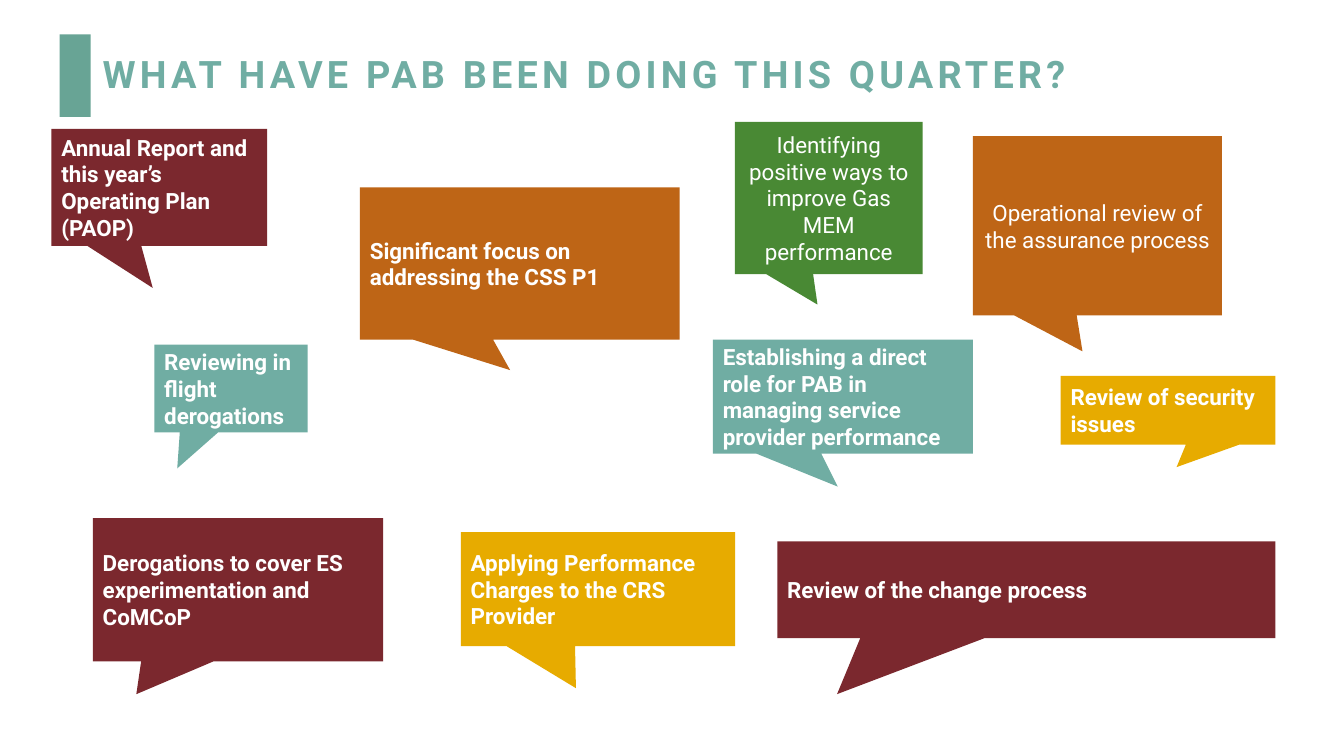
import pptx
import pptx.dml.color
import pptx.enum.shapes
import pptx.enum.text
import pptx.util
from pptx.util import Inches

ALIGN = pptx.enum.text.PP_ALIGN
SHAPES = pptx.enum.shapes.MSO_SHAPE

FONT = "Roboto"
MAROON, AMBER, ORANGE = "7B282E", "E7AB00", "BE6516"
TEAL, GREEN, WHITE = "70ADA3", "498934", "FFFFFF"

TITLE = "WHAT HAVE PAB BEEN DOING THIS QUARTER?"
TITLE_BOX = (0.92, 0.4, 10.15, 0.72)
ACCENT_BAR = (0.59, 0.34, 0.31, 0.82)
ACCENT_COLOUR = "68A495"

# wording, (left, top, width, height), pointer tip offset as share of size, fill
BOLD_ACTIVITIES = [
    ("Annual Report and this year’s Operating Plan (PAOP)",
     (0.51, 1.28, 2.14, 1.16), (-0.03, 0.86), MAROON),
    ("Applying Performance Charges to the CRS Provider",
     (4.57, 5.28, 2.72, 1.13), (-0.08, 0.87), AMBER),
    ("Significant focus on addressing the CSS P1",
     (3.57, 1.86, 3.17, 1.51), (-0.03, 0.7), ORANGE),
    ("Establishing a direct role for PAB in managing service provider performance",
     (7.07, 3.37, 2.58, 1.13), (-0.02, 0.79), TEAL),
    ("Review of the change process",
     (7.71, 5.37, 4.94, 0.96), (-0.38, 1.08), MAROON),
    ("Review of security issues",
     (10.52, 3.73, 2.13, 0.68), (0.04, 0.83), AMBER),
    ("Derogations to cover ES experimentation and CoMCoP",
     (0.92, 5.14, 2.88, 1.42), (-0.35, 0.73), MAROON),
    ("Reviewing in flight derogations",
     (1.53, 3.42, 1.52, 0.87), (-0.35, 0.91), TEAL),
]
CENTRED_ACTIVITIES = [
    ("Operational review of the assurance process",
     (9.65, 1.35, 2.47, 1.78), (-0.06, 0.7), ORANGE),
    ("Identifying positive ways to improve Gas MEM performance",
     (7.29, 1.21, 1.86, 1.51), (-0.06, 0.7), GREEN),
]


def colour(hex_code):
    return pptx.dml.color.RGBColor.from_string(hex_code)


def add_block(slide, preset, box, fill):
    block = slide.shapes.add_shape(preset, *map(Inches, box))
    block.shadow.inherit = False
    block.fill.solid()
    block.fill.fore_color.rgb = colour(fill)
    block.line.fill.background()
    return block


def write(shape, wording, size, text_colour, bold, align=ALIGN.LEFT):
    frame = shape.text_frame
    frame.word_wrap = True
    frame.vertical_anchor = pptx.enum.text.MSO_ANCHOR.MIDDLE
    paragraph = frame.paragraphs[0]
    paragraph.text = wording
    paragraph.alignment = align
    paragraph.font.name = FONT
    paragraph.font.size = pptx.util.Pt(size)
    paragraph.font.bold = bold
    paragraph.font.color.rgb = colour(text_colour)
    return paragraph


def add_callout(slide, activity, bold, align):
    wording, box, tip, fill = activity
    callout = add_block(slide, SHAPES.RECTANGULAR_CALLOUT, box, fill)
    callout.adjustments[0], callout.adjustments[1] = tip
    frame = callout.text_frame
    frame.margin_left = frame.margin_right = Inches(0.1)
    frame.margin_top = frame.margin_bottom = Inches(0.1)
    write(callout, wording, 16, WHITE, bold, align)


def main():
    deck = pptx.Presentation()
    deck.slide_width, deck.slide_height = Inches(13.33), Inches(7.5)
    slide = deck.slides.add_slide(deck.slide_layouts[6])

    # Heading with accent bar
    add_block(slide, SHAPES.RECTANGLE, ACCENT_BAR, ACCENT_COLOUR)
    heading = slide.shapes.add_textbox(*map(Inches, TITLE_BOX))
    title = write(heading, TITLE, 27, TEAL, True)
    title.line_spacing = 0.9
    # Letter spacing of 3 points, in hundredths
    title.runs[0].font._element.set("spc", "300")

    # Activity callouts
    for activity in BOLD_ACTIVITIES:
        add_callout(slide, activity, True, ALIGN.LEFT)
    for activity in CENTRED_ACTIVITIES:
        add_callout(slide, activity, False, ALIGN.CENTER)

    deck.save("out.pptx")


if __name__ == "__main__":
    main()
